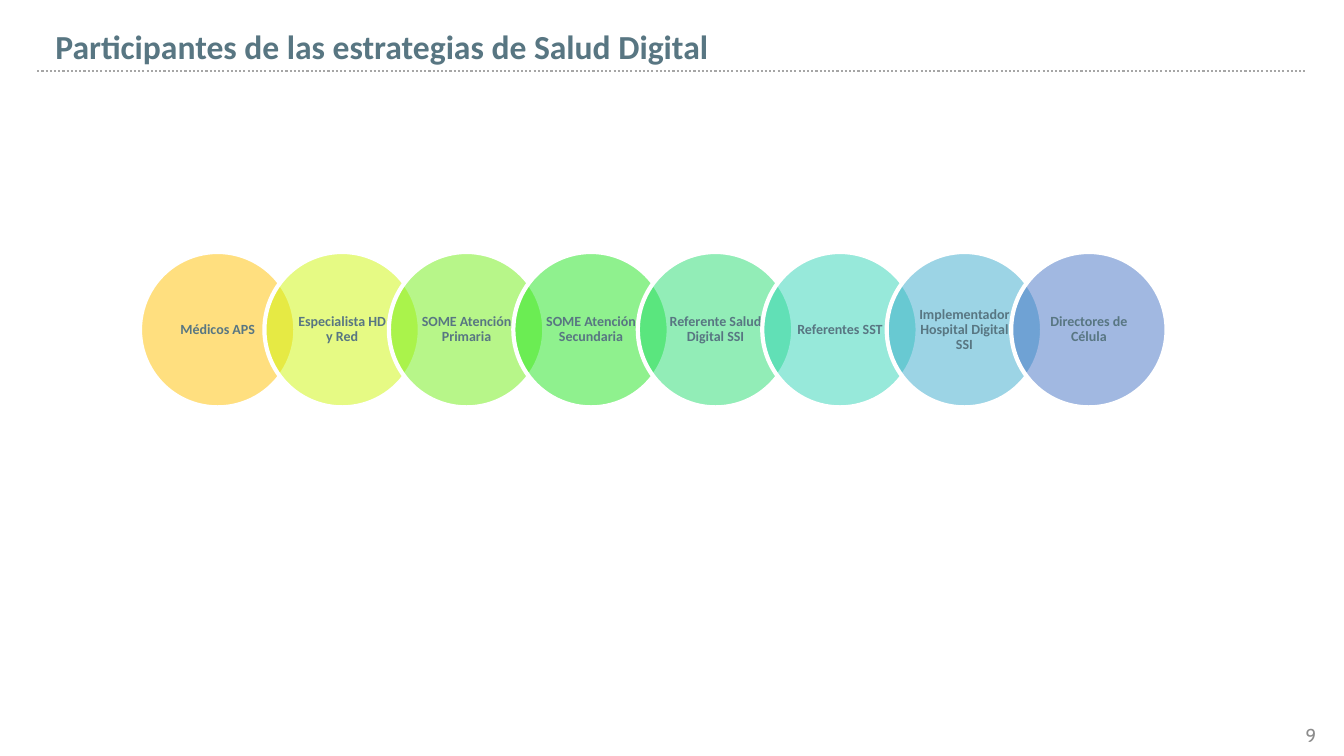
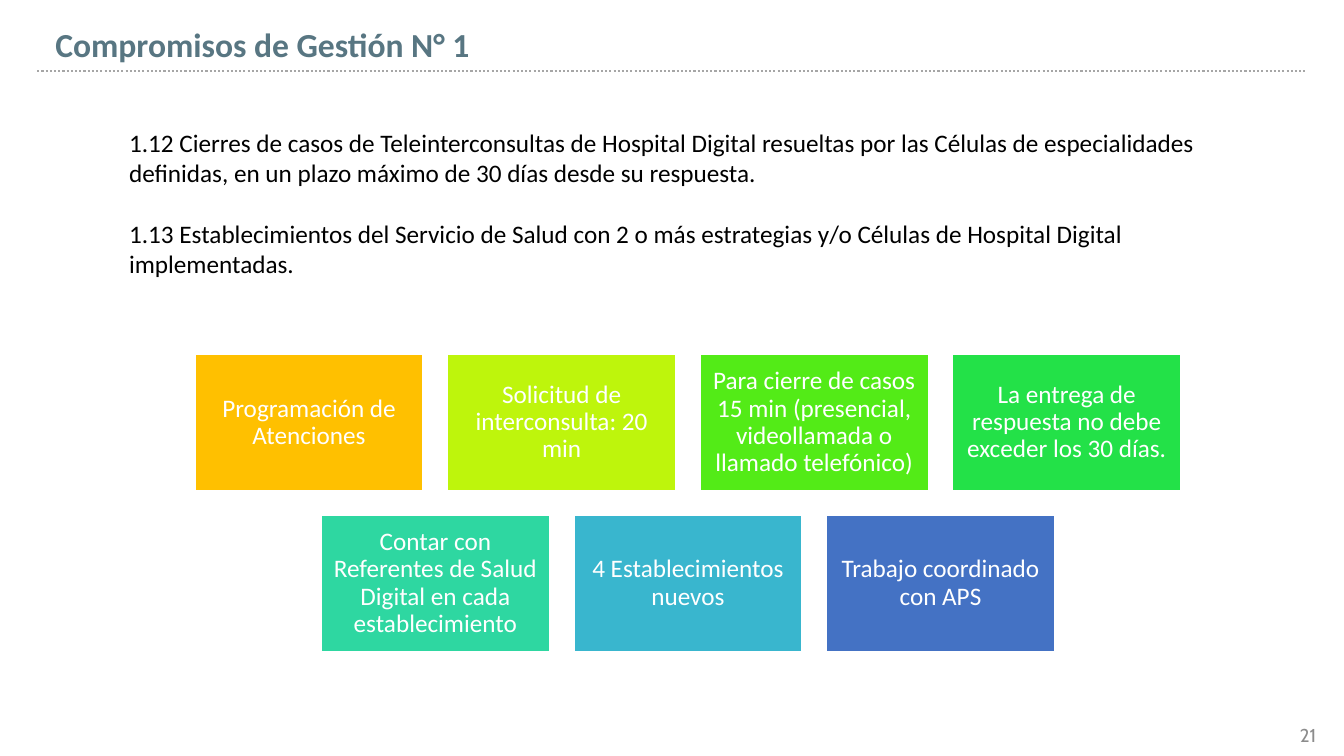
from pptx import Presentation
from pptx.dml.color import RGBColor
from pptx.enum.dml import MSO_LINE
from pptx.enum.shapes import MSO_CONNECTOR, MSO_SHAPE
from pptx.enum.text import MSO_ANCHOR, PP_ALIGN
from pptx.oxml.ns import qn
from pptx.util import Pt
from lxml import etree

SLATE, WHITE, BLACK = "587682", "FFFFFF", "000000"
RULE_GRAY, NUMBER_GRAY = "A6A6A6", "8C8C8C"

PARTICIPANTS = [
    ("Médicos APS", "FFC000"),
    ("Especialista HD y Red", "CFF60A"),
    ("SOME Atención Primaria", "70EE14"),
    ("SOME Atención Secundaria", "20E51E"),
    ("Referente Salud Digital SSI", "27DD70"),
    ("Referentes SST", "31D4B6"),
    ("Implementador Hospital Digital SSI", "3BABCC"),
    ("Directores de Célula", "4472C4"),
]
COMMITMENTS = [
    "1.12 Cierres de casos de Teleinterconsultas de Hospital Digital resueltas por las "
    "Células de especialidades definidas, en un plazo máximo de 30 días desde su respuesta.",
    "1.13 Establecimientos del Servicio de Salud con 2 o más estrategias y/o Células de "
    "Hospital Digital implementadas.",
]
ACTION_ROWS = [
    [
        ("Programación de Atenciones", "FFC000"),
        ("Solicitud de interconsulta: 20 min", "BEF50C"),
        ("Para cierre de casos 15 min (presencial, videollamada o llamado telefónico)", "53EB17"),
        ("La entrega de respuesta no debe exceder los 30 días.", "23E148"),
    ],
    [
        ("Contar con Referentes de Salud Digital en cada establecimiento", "2ED7A1"),
        ("4 Establecimientos nuevos", "39B6CE"),
        ("Trabajo coordinado con APS", "4472C4"),
    ],
]

CIRCLE_LEFT, CIRCLE_TOP, CIRCLE_SIZE, CIRCLE_STEP = 100, 180, 111, 88.9
CARD_WIDTH, CARD_HEIGHT, CARD_GAP = 164, 98.4, 16.4
CARDS_CENTER, CARDS_TOP = 491.4, 252.6


def rgb(color):
    return RGBColor.from_string(color)


def write(shape, paragraphs, size, color, font="Calibri", bold=False, align=PP_ALIGN.LEFT,
          anchor=MSO_ANCHOR.MIDDLE, insets=(7.2, 3.6), spacing=1.0, gap=0):
    """Fill a shape with styled text; insets are (horizontal, vertical), gap separates paragraphs."""
    frame = shape.text_frame
    frame.text = "\n".join(paragraphs)
    frame.word_wrap = True
    frame.vertical_anchor = anchor
    frame.margin_left = frame.margin_right = Pt(insets[0])
    frame.margin_top = frame.margin_bottom = Pt(insets[1])
    for index, paragraph in enumerate(frame.paragraphs):
        paragraph.alignment = align
        paragraph.line_spacing = spacing
        if index:
            paragraph.space_before = Pt(gap)
        for run in paragraph.runs:
            run.font.name, run.font.size, run.font.bold = font, Pt(size), bold
            run.font.color.rgb = rgb(color)


def add_text(slide, box, paragraphs, size, color, **style):
    write(slide.shapes.add_textbox(*map(Pt, box)), paragraphs, size, color, **style)


def add_label(slide, kind, box, text, fill, outline, size, color, opacity=100, **style):
    """Add a filled shape with a white outline and centred text."""
    shape = slide.shapes.add_shape(kind, *map(Pt, box))
    shape.shadow.inherit = False
    shape.fill.solid()
    shape.fill.fore_color.rgb = rgb(fill)
    if opacity < 100:
        fill_color = shape._element.spPr.find(qn("a:solidFill"))[0]
        etree.SubElement(fill_color, qn("a:alpha"), val=str(opacity * 1000))
    shape.line.color.rgb = rgb(WHITE)
    shape.line.width = Pt(outline)
    write(shape, [text], size, color, align=PP_ALIGN.CENTER, spacing=0.9, **style)


def add_base_slide(deck, title, number, title_spacing=1.0):
    """Add a slide with the shared title, dotted rule and page number."""
    slide = deck.slides.add_slide(deck.slide_layouts[6])
    add_text(slide, (733.7, 510.5, 216, 28.8), [number], 13.3, NUMBER_GRAY, font="Cabin",
             align=PP_ALIGN.RIGHT, insets=(9.4, 5))
    rule = slide.shapes.add_connector(MSO_CONNECTOR.STRAIGHT, Pt(26.6), Pt(51), Pt(933.8), Pt(51))
    rule.line.color.rgb = rgb(RULE_GRAY)
    rule.line.width = Pt(1.5)
    rule.line.dash_style = MSO_LINE.ROUND_DOT
    etree.SubElement(rule._element.spPr, qn("a:effectLst"))
    add_text(slide, (32.4, 5.8, 918, 54.7), [title], 24, SLATE, bold=True, spacing=title_spacing)
    return slide


def add_participants(deck):
    slide = add_base_slide(deck, "Participantes de las estrategias de Salud Digital", "9")
    for index, (name, fill) in enumerate(PARTICIPANTS):
        box = (CIRCLE_LEFT + index * CIRCLE_STEP, CIRCLE_TOP, CIRCLE_SIZE, CIRCLE_SIZE)
        add_label(slide, MSO_SHAPE.OVAL, box, name, fill, 3, 10, SLATE,
                  opacity=50, bold=True, insets=(5.8, 0.9))


def add_commitments(deck):
    slide = add_base_slide(deck, "Compromisos de Gestión N° 1", "21", title_spacing=0.9)
    add_text(slide, (77.8, 82.8, 827.3, 124.6), COMMITMENTS, 18, BLACK,
             anchor=MSO_ANCHOR.TOP, insets=(14.4, 7.9), gap=22)
    for row, actions in enumerate(ACTION_ROWS):
        row_width = len(actions) * (CARD_WIDTH + CARD_GAP) - CARD_GAP
        left = CARDS_CENTER - row_width / 2
        top = CARDS_TOP + row * (CARD_HEIGHT + CARD_GAP)
        for column, (action, fill) in enumerate(actions):
            box = (left + column * (CARD_WIDTH + CARD_GAP), top, CARD_WIDTH, CARD_HEIGHT)
            add_label(slide, MSO_SHAPE.RECTANGLE, box, action, fill, 2, 18, WHITE,
                      insets=(5, 5))


def main():
    deck = Presentation()
    deck.slide_width, deck.slide_height = Pt(960), Pt(540)
    add_participants(deck)
    add_commitments(deck)
    deck.save("out.pptx")


if __name__ == "__main__":
    main()
